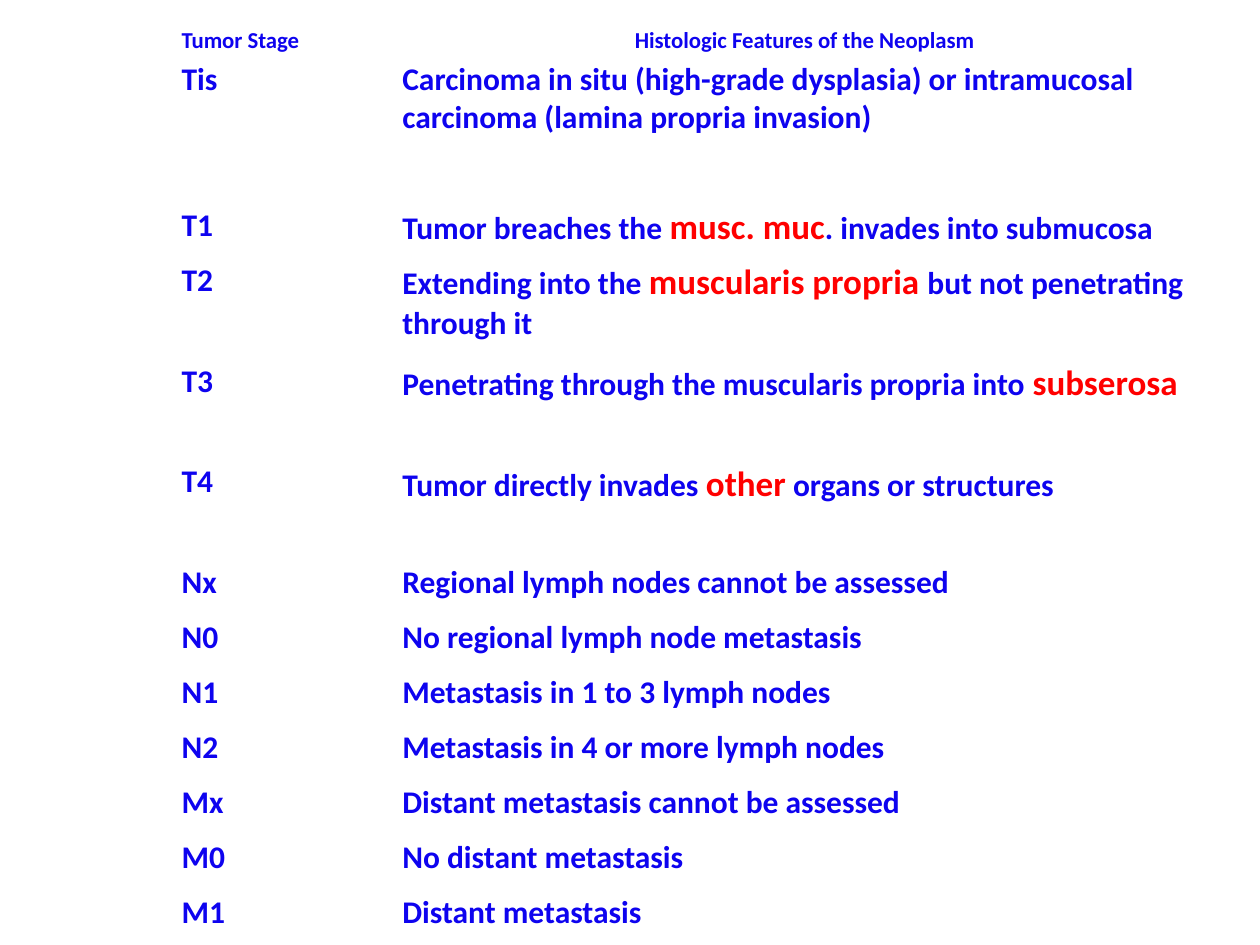
from pptx import Presentation
from pptx import util as u
from pptx.dml import color
from pptx.enum import text

BLUE, RED = "0E03EF", "FF0000"
HEADER = {"size": u.Pt(13), "color": BLUE}
BODY = {"size": u.Pt(18), "color": BLUE}
KEY = {"size": u.Pt(20), "color": RED}

SHORT, MEDIUM, TALL = 1.11, 2.03, 2.95  # row heights in cm
COLUMNS = (4.45, 16.31)

# Stage, description (key terms between asterisks), row height
STAGES = [
    ("Tis", "Carcinoma in situ (high-grade dysplasia) or intramucosal "
            "carcinoma (lamina propria invasion)", TALL),
    ("T1", "Tumor breaches the *musc. muc*. invades into submucosa", SHORT),
    ("T2", "Extending into the *muscularis propria *but not penetrating "
           "through it", MEDIUM),
    ("T3", "Penetrating through the muscularis propria into *subserosa*",
     MEDIUM),
    ("T4", "Tumor directly invades *other* organs or structures", MEDIUM),
    ("Nx", "Regional lymph nodes cannot be assessed", SHORT),
    ("N0", "No regional lymph node metastasis", SHORT),
    ("N1", "Metastasis in 1 to 3 lymph nodes", SHORT),
    ("N2", "Metastasis in 4 or more lymph nodes", SHORT),
    ("Mx", "Distant metastasis cannot be assessed", SHORT),
    ("M0", "No distant metastasis", SHORT),
    ("M1", "Distant metastasis", SHORT),
]


def rgb(value):
    return color.RGBColor.from_string(value)


def add_run(p, content, style):
    r = p.add_run()
    r.text = content
    font = {"name": "Calibri", "bold": True, "size": style["size"]}
    for name, value in font.items():
        setattr(r.font, name, value)
    r.font.color.rgb = rgb(style["color"])


def fill_cell(cell, content, style, anchor, align):
    cell.fill.background()
    margin = u.Cm(0.05)
    layout = {"margin_left": margin, "margin_right": margin,
              "margin_top": margin, "margin_bottom": margin,
              "vertical_anchor": anchor}
    for name, value in layout.items():
        setattr(cell, name, value)
    p = cell.text_frame.paragraphs[0]
    p.alignment = align
    # Every second piece is a key term
    for i, piece in enumerate(content.split("*")):
        if piece:
            add_run(p, piece, KEY if i % 2 else style)


def add_staging_table(s, left, top, columns):
    heights = [SHORT] + [height for _, _, height in STAGES]
    table = s.shapes.add_table(
        len(heights), len(columns), u.Cm(left), u.Cm(top),
        u.Cm(sum(columns)), u.Cm(sum(heights))).table
    table.first_row = table.horz_banding = False
    for column, width in zip(table.columns, columns):
        column.width = u.Cm(width)
    for row, height in zip(table.rows, heights):
        row.height = u.Cm(height)

    # Header row
    bottom, top_anchor = text.MSO_ANCHOR.BOTTOM, text.MSO_ANCHOR.TOP
    start, center = text.PP_ALIGN.LEFT, text.PP_ALIGN.CENTER
    fill_cell(table.cell(0, 0), "Tumor Stage", HEADER, bottom, start)
    fill_cell(table.cell(0, 1), "Histologic Features of the Neoplasm",
              HEADER, bottom, center)

    # Stage rows
    for i, (stage, features, _) in enumerate(STAGES, start=1):
        for j, content in enumerate((stage, features)):
            fill_cell(table.cell(i, j), content, BODY, top_anchor, start)


def main():
    prs = Presentation()
    prs.slide_width, prs.slide_height = u.Cm(25.4), u.Cm(19.05)
    s = prs.slides.add_slide(prs.slide_layouts[6])
    add_staging_table(s, 3.61, 0.05, COLUMNS)
    prs.save("out.pptx")


if __name__ == "__main__":
    main()
